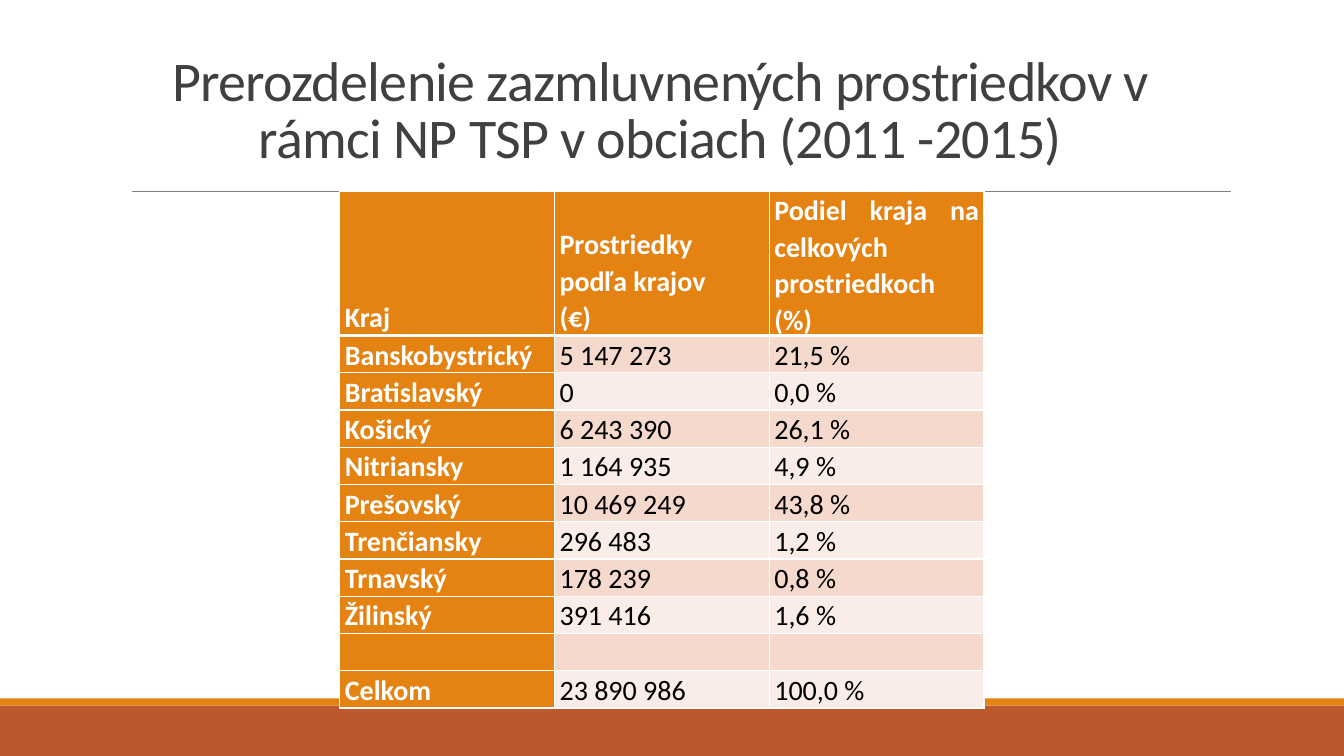
from dataclasses import dataclass

from lxml.etree import SubElement
from pptx import Presentation
from pptx.dml.color import RGBColor
from pptx.enum.shapes import MSO_CONNECTOR, MSO_SHAPE
from pptx.enum.text import MSO_ANCHOR as ANCHOR, PP_ALIGN as ALIGN
from pptx.oxml.ns import qn
from pptx.util import Inches, Pt


@dataclass(frozen=True)
class Theme:
    font: str = "Calibri"
    title_size: int = 40
    table_size: int = 20
    title: str = "404040"
    text: str = "000000"
    white: str = "FFFFFF"
    accent: str = "E48312"
    footer: str = "BD582C"
    rule: str = "808080"
    bands: tuple = ("F5D9CC", "FAEDE7")


T = Theme()
W, H = 13.33, 7.5

TITLE = "Prerozdelenie zazmluvnených prostriedkov v rámci NP TSP v obciach (2011 -2015)"
ROWS = [
    ("Kraj", "Prostriedky podľa krajov \n(€)", "Podiel kraja na celkových prostriedkoch (%)"),
    ("Banskobystrický", "5 147 273", "21,5 %"),
    ("Bratislavský", "0", "0,0 %"),
    ("Košický", "6 243 390", "26,1 %"),
    ("Nitriansky", "1 164 935", "4,9 %"),
    ("Prešovský", "10 469 249", "43,8 %"),
    ("Trenčiansky", "296 483", "1,2 %"),
    ("Trnavský", "178 239", "0,8 %"),
    ("Žilinský", "391 416", "1,6 %"),
    ("", "", ""),
    ("Celkom", "23 890 986", "100,0 %"),
]


def rgb(color):
    return RGBColor.from_string(color)


def write(tf, text, *, size, color, bold=False, align=ALIGN.LEFT, leading=1.0, spacing=0):
    """Fill a text frame, one paragraph per line of text."""
    for i, line in enumerate(text.split("\n")):
        p = tf.add_paragraph() if i else tf.paragraphs[0]
        p.alignment, p.line_spacing = align, leading
        if not line:
            continue
        r = p.add_run()
        r.text = line
        r.font.name, r.font.size, r.font.bold = T.font, Pt(size), bold
        r.font.color.rgb = rgb(color)
        if spacing:
            r.font._element.set("spc", str(round(spacing * 100)))


def add_bar(s, x, y, w, h, color):
    sp = s.shapes.add_shape(MSO_SHAPE.RECTANGLE, Inches(x), Inches(y), Inches(w), Inches(h))
    sp.shadow.inherit = False
    sp.fill.solid()
    sp.fill.fore_color.rgb = rgb(color)
    sp.line.fill.background()


def add_footer(s, x, y, w, h, stripe=0.07):
    """Place the footer band with its thin stripe on top."""
    add_bar(s, x, y + stripe, w, h - stripe, T.footer)
    add_bar(s, x, y, w, stripe, T.accent)


def add_rule(s, x, y, w):
    line = s.shapes.add_connector(
        MSO_CONNECTOR.STRAIGHT, Inches(x), Inches(y), Inches(x + w), Inches(y))
    line.line.color.rgb = rgb(T.rule)
    line.line.width = Pt(0.5)
    SubElement(line._element.spPr, qn("a:effectLst"))


def add_title(s, x, y, w, h):
    tf = s.shapes.add_textbox(Inches(x), Inches(y), Inches(w), Inches(h)).text_frame
    tf.word_wrap = True
    tf.vertical_anchor = ANCHOR.BOTTOM
    tf.margin_bottom = Inches(0.62)
    write(tf, TITLE, size=T.title_size, color=T.title, align=ALIGN.CENTER,
          leading=0.85, spacing=-0.5)


def set_borders(cell, **widths):
    """Draw white cell borders; widths in points by side L, R, T, B."""
    tcPr = cell._tc.get_or_add_tcPr()
    for side, width in widths.items():
        ln = SubElement(tcPr, qn(f"a:ln{side}"), w=str(Pt(width)))
        fill = SubElement(ln, qn("a:solidFill"))
        SubElement(fill, qn("a:srgbClr"), val=T.white)


def add_region_table(s, x, y, w, h, header_h=1.38):
    n_rows, n_cols = len(ROWS), len(ROWS[0])
    table = s.shapes.add_table(
        n_rows, n_cols, Inches(x), Inches(y), Inches(w), Inches(h)).table
    for col in table.columns:
        col.width = Inches(w / n_cols)
    for i, row in enumerate(table.rows):
        row.height = Inches((h - header_h) / (n_rows - 1) if i else header_h)
        for j, cell in enumerate(row.cells):
            heading = i == 0 or j == 0
            set_borders(cell, L=1, R=1, T=3 if i == 1 else 1, B=1 if i else 3)
            cell.fill.solid()
            cell.fill.fore_color.rgb = rgb(T.accent if heading else T.bands[(i - 1) % 2])
            cell.margin_left = cell.margin_right = Inches(0.05)
            cell.margin_top = cell.margin_bottom = 0
            cell.vertical_anchor = ANCHOR.BOTTOM
            write(cell.text_frame, ROWS[i][j], size=T.table_size, bold=heading,
                  color=T.white if heading else T.text, align=ALIGN.JUSTIFY, leading=1.07)


def main():
    prs = Presentation()
    prs.slide_width, prs.slide_height = Inches(W), Inches(H)
    s = prs.slides.add_slide(prs.slide_layouts[6])
    add_footer(s, 0, 6.93, W, H - 6.93)
    add_rule(s, 1.31, 1.9, 10.9)
    add_title(s, 1.05, 0.13, 11, 2.18)
    add_region_table(s, 3.37, 1.9, 6.39, 5.08)
    prs.save("out.pptx")


if __name__ == "__main__":
    main()
